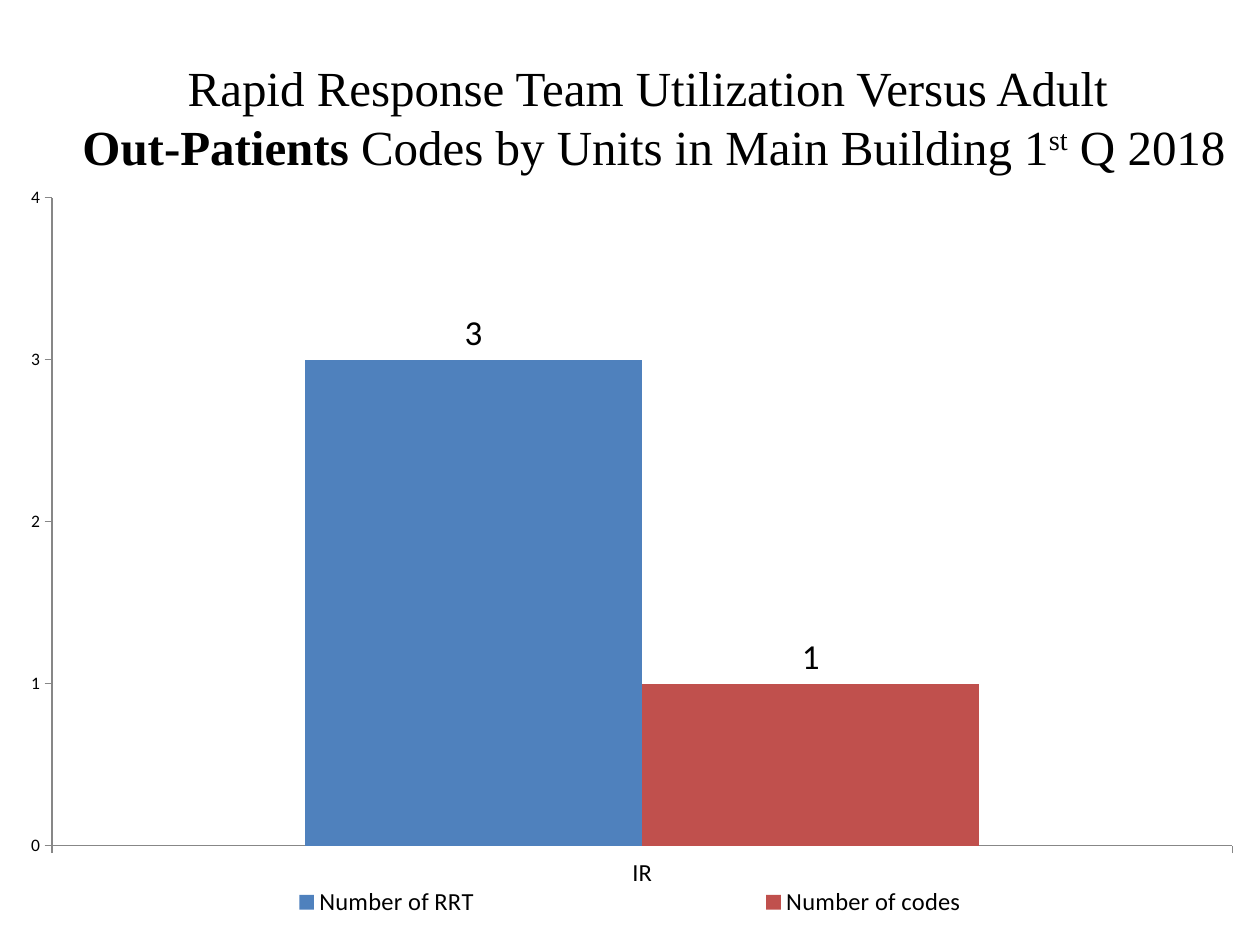
from dataclasses import dataclass

import lxml.etree
import pptx
import pptx.chart.data
import pptx.dml.color
import pptx.enum.chart
import pptx.enum.text
import pptx.oxml
import pptx.oxml.ns
import pptx.util
from pptx.util import Inches


@dataclass(frozen=True)
class Theme:
    title_font: str = "Times New Roman"
    chart_font: str = "Calibri"
    text: str = "000000"
    axis: str = "878787"
    title_size: int = 28
    chart_size: int = 10
    category_size: int = 14
    label_size: int = 20


@dataclass(frozen=True)
class TitlePart:
    text: str
    bold: bool = False
    superscript: bool = False


@dataclass(frozen=True)
class Series:
    name: str
    value: int
    color: str


THEME = Theme()
TITLE_LINES = [
    [TitlePart("Rapid Response Team Utilization Versus Adult ")],
    [
        TitlePart("Out-Patients ", bold=True),
        TitlePart("Codes by Units in Main Building 1"),
        TitlePart("st", superscript=True),
        TitlePart(" Q 2018"),
    ],
]
SERIES = [
    Series("Number of RRT", 3, "4F81BD"),
    Series("Number of codes", 1, "C0504D"),
]


def rgb(color: str) -> pptx.dml.color.RGBColor:
    return pptx.dml.color.RGBColor.from_string(color)


def style_font(font, name: str, size: int) -> None:
    font.name = name
    font.size = pptx.util.Pt(size)
    font.color.rgb = rgb(THEME.text)


def add_title(page) -> None:
    box = page.shapes.add_textbox(Inches(0.5), Inches(0.3), Inches(9.38), Inches(1.25))
    frame = box.text_frame
    frame.word_wrap = True
    frame.vertical_anchor = pptx.enum.text.MSO_ANCHOR.MIDDLE
    para = frame.paragraphs[0]
    para.alignment = pptx.enum.text.PP_ALIGN.CENTER
    for index, line in enumerate(TITLE_LINES):
        if index:
            para.add_line_break()
        for part in line:
            span = para.add_run()
            span.text = part.text
            style_font(span.font, THEME.title_font, THEME.title_size)
            span.font.bold = part.bold
            if part.superscript:
                span.font._element.set("baseline", "30000")


def set_layout(parent, left: float, top: float, width: float, height: float,
               inner: bool = False) -> None:
    tag = pptx.oxml.ns.qn
    for old in parent.findall(tag("c:layout")):
        parent.remove(old)
    layout = lxml.etree.Element(tag("c:layout"))
    manual = lxml.etree.SubElement(layout, tag("c:manualLayout"))
    values = {"xMode": "edge", "yMode": "edge", "x": left, "y": top, "w": width, "h": height}
    if inner:
        values = {"layoutTarget": "inner", **values}
    for name, value in values.items():
        lxml.etree.SubElement(manual, tag(f"c:{name}")).set("val", str(value))
    position = parent.find(tag("c:legendPos"))
    if position is None:
        parent.insert(0, layout)
    else:
        position.addnext(layout)


def style_axis(axis, size: int) -> None:
    axis.has_major_gridlines = False
    axis.major_tick_mark = pptx.enum.chart.XL_TICK_MARK.OUTSIDE
    axis.minor_tick_mark = pptx.enum.chart.XL_TICK_MARK.NONE
    axis.format.line.color.rgb = rgb(THEME.axis)
    axis.format.line.width = pptx.util.Pt(0.75)
    style_font(axis.tick_labels.font, THEME.chart_font, size)


def add_chart(page) -> None:
    data = pptx.chart.data.CategoryChartData()
    data.categories = ["IR"]
    for series in SERIES:
        data.add_series(series.name, [series.value])
    chart = page.shapes.add_chart(
        pptx.enum.chart.XL_CHART_TYPE.COLUMN_CLUSTERED,
        Inches(0.12), Inches(1.39), Inches(9.76), Inches(5.98), data,
    ).chart
    chart.has_title = False
    style_font(chart.font, THEME.chart_font, THEME.chart_size)
    style_axis(chart.category_axis, THEME.category_size)
    style_axis(chart.value_axis, THEME.chart_size)
    chart.value_axis.minimum_scale = 0
    chart.value_axis.maximum_scale = 4
    chart.value_axis.major_unit = 1

    plot = chart.plots[0]
    plot.gap_width = 150
    plot.overlap = 0
    plot.vary_by_categories = False
    for column, series in zip(plot.series, SERIES):
        column.format.fill.solid()
        column.format.fill.fore_color.rgb = rgb(series.color)
        labels = column.data_labels
        labels.show_value = True
        labels.position = pptx.enum.chart.XL_LABEL_POSITION.OUTSIDE_END
        style_font(labels.font, THEME.chart_font, THEME.label_size)

    chart.has_legend = True
    legend = chart.legend
    legend.position = pptx.enum.chart.XL_LEGEND_POSITION.RIGHT
    legend.include_in_layout = False
    style_font(legend.font, THEME.chart_font, THEME.category_size)
    set_layout(legend._element, 0, 0.94, 1, 0.05)
    set_layout(chart._chartSpace.chart.plotArea, 0.03, 0.03, 0.96, 0.86, inner=True)


def main() -> None:
    deck = pptx.Presentation()
    deck.slide_width = Inches(10)
    deck.slide_height = Inches(7.5)
    page = deck.slides.add_slide(deck.slide_layouts[6])
    add_title(page)
    add_chart(page)
    deck.save("out.pptx")


if __name__ == "__main__":
    main()
